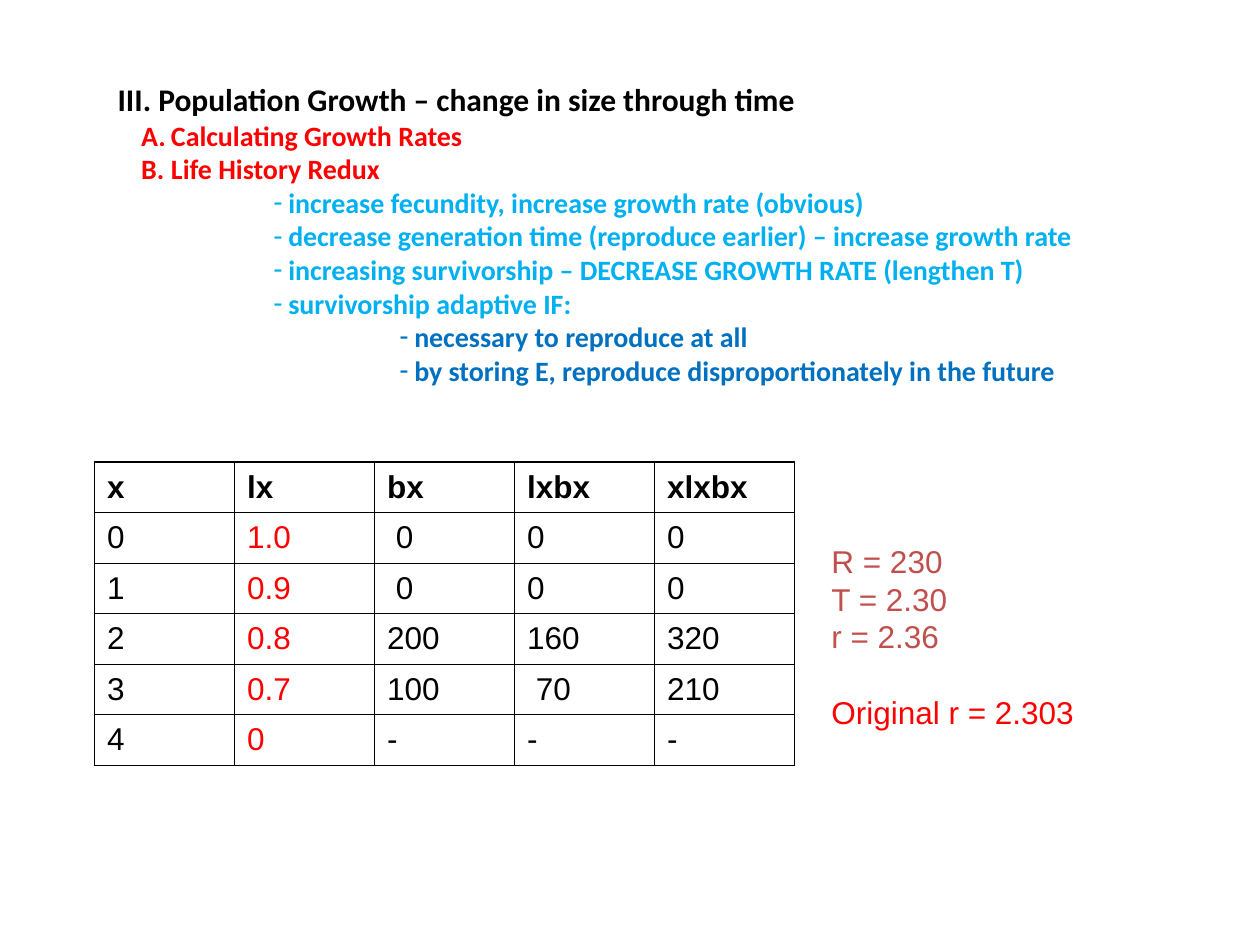
from lxml import etree
from pptx import Presentation
from pptx.dml.color import RGBColor
from pptx.enum.text import MSO_ANCHOR as ANCHOR, MSO_AUTO_SIZE as AUTO, PP_ALIGN as ALIGN
from pptx.oxml.ns import qn
from pptx.util import Pt

COLORS = {"black": "000000", "red": "FF0000", "sky": "00B0F0", "blue": "0070C0", "brick": "C0504D"}


def style(p, font, size, color, bold=False):
    for r in p.runs:
        r.font.name, r.font.size, r.font.bold = font, Pt(size), bold
        r.font.color.rgb = RGBColor.from_string(COLORS[color])


def place(sp, left, top, width, height):
    sp.left, sp.top, sp.width, sp.height = Pt(left), Pt(top), Pt(width), Pt(height)
    tf = sp.text_frame
    tf.word_wrap, tf.auto_size, tf.vertical_anchor = True, AUTO.NONE, ANCHOR.TOP
    return tf


prs = Presentation()
prs.slide_width, prs.slide_height = Pt(720), Pt(540)
s = prs.slides.add_slide(prs.slide_layouts[1])

tf = place(s.shapes.title, 60, 42, 618, 26)
tf.text = "III. Population Growth – change in size through time"
tf.paragraphs[0].alignment = ALIGN.LEFT
style(tf.paragraphs[0], "Calibri", 18, "black", True)

LEVELS = [
    ("red", 30.5, 17, "buAutoNum", {"type": "alphaUcPeriod"}),
    ("sky", 97.5, 8.5, "buChar", {"char": "-"}),
    ("blue", 169.5, 8.5, "buChar", {"char": "-"}),
]
outline = [
    (0, "Calculating Growth Rates"),
    (0, "Life History Redux"),
    (1, "increase fecundity, increase growth rate (obvious)"),
    (1, "decrease generation time (reproduce earlier) – increase growth rate"),
    (1, "increasing survivorship – DECREASE GROWTH RATE (lengthen T)"),
    (1, "survivorship adaptive IF:"),
    (2, "necessary to reproduce at all"),
    (2, "by storing E, reproduce disproportionately in the future"),
]
tf = place(s.placeholders[1], 60, 67.5, 618, 160)
tf.margin_top = 0
tf.text = "\n".join(text for _, text in outline)
for p, (level, _) in zip(tf.paragraphs, outline):
    color, left, hang, tag, attrs = LEVELS[level]
    p.level = level
    p.space_before = Pt(0)
    pPr = p._p.get_or_add_pPr()
    pPr.set("marL", str(Pt(left)))
    pPr.set("indent", str(-Pt(hang)))
    etree.SubElement(pPr, qn("a:" + tag), attrs)
    style(p, "Calibri", 16, color, True)

rows = [
    ["x", "lx", "bx", "lxbx", "xlxbx"],
    ["0", "1.0", " 0", "0", "0"],
    ["1", "0.9", " 0", "0", "0"],
    ["2", "0.8", "200", "160", "320"],
    ["3", "0.7", "100", " 70", "210"],
    ["4", "0", "-", "-", "-"],
]
table = s.shapes.add_table(6, 5, Pt(54), Pt(264), Pt(400), Pt(173.4)).table
for i, row in enumerate(rows):
    table.rows[i].height = Pt(28.9)
    for j, text in enumerate(row):
        cell = table.cell(i, j)
        cell.text = text
        cell.vertical_anchor = ANCHOR.MIDDLE
        cell.fill.background()
        style(cell.text_frame.paragraphs[0], "Arial", 18, "red" if i and j == 1 else "black", i == 0)
        tcPr = cell._tc.get_or_add_tcPr()
        for k, side in enumerate(["lnL", "lnR", "lnT", "lnB"]):
            ln = etree.Element(qn("a:" + side), {"w": str(Pt(0.75))})
            fill = etree.SubElement(ln, qn("a:solidFill"))
            etree.SubElement(fill, qn("a:srgbClr"), {"val": COLORS["black"]})
            tcPr.insert(k, ln)

tf = place(s.shapes.add_textbox(0, 0, 0, 0), 468, 306, 240, 115)
tf.text = "R = 230\nT = 2.30\nr = 2.36\nOriginal r = 2.303"
for p in tf.paragraphs:
    style(p, "Arial", 18, "brick")
style(p, "Arial", 18, "red")
p.space_before = Pt(21.5)

prs.save("out.pptx")
